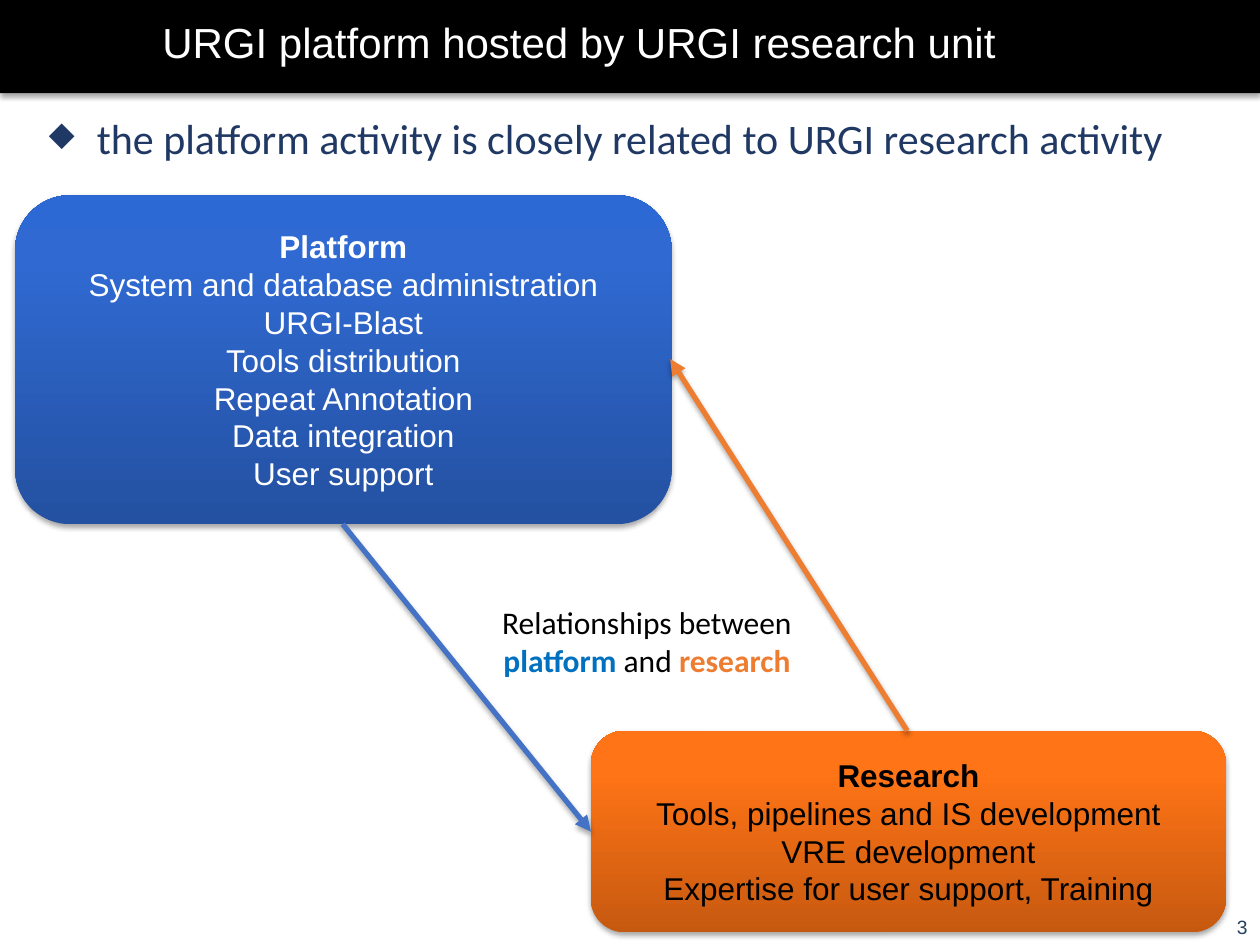
"""Build the slide relating the URGI platform to the URGI research unit."""
from lxml import etree
from pptx import Presentation
from pptx.dml.color import RGBColor
from pptx.enum import shapes, text
from pptx.oxml import ns
from pptx.util import Inches, Pt

BLACK = RGBColor(0x00, 0x00, 0x00)
WHITE = RGBColor(0xFF, 0xFF, 0xFF)
NAVY = RGBColor(0x20, 0x38, 0x64)
NUMBER = RGBColor(0x25, 0x40, 0x61)
BLUE = RGBColor(0x44, 0x72, 0xC4)
ORANGE = RGBColor(0xED, 0x7D, 0x31)
SKY = RGBColor(0x00, 0x70, 0xC0)
PLATFORM_STOPS = [
    (0, RGBColor(0x24, 0x51, 0xA1)),
    (80, RGBColor(0x2F, 0x69, 0xD1)),
    (100, RGBColor(0x2C, 0x69, 0xD5)),
]
RESEARCH_STOPS = [
    (0, RGBColor(0xC6, 0x59, 0x10)),
    (80, RGBColor(0xFF, 0x74, 0x16)),
    (100, RGBColor(0xFF, 0x75, 0x17)),
]
LEFT, CENTER, RIGHT = text.PP_ALIGN.LEFT, text.PP_ALIGN.CENTER, text.PP_ALIGN.RIGHT
TOP, MIDDLE = text.MSO_ANCHOR.TOP, text.MSO_ANCHOR.MIDDLE


def add_shadow(sp):
    effects = etree.SubElement(sp._element.spPr, ns.qn("a:effectLst"))
    shadow = etree.SubElement(effects, ns.qn("a:outerShdw"), blurRad=str(Pt(3.1)),
                              dist=str(Pt(1.8)), dir="5400000", rotWithShape="0")
    color = etree.SubElement(shadow, ns.qn("a:srgbClr"), val=str(BLACK))
    etree.SubElement(color, ns.qn("a:alpha"), val="35000")


def write(sp, lines, name, size, align, anchor):
    tf = sp.text_frame
    tf.word_wrap = True
    tf.vertical_anchor = anchor
    for i, runs in enumerate(lines):
        p = tf.add_paragraph() if i else tf.paragraphs[0]
        p.alignment = align
        for wording, color, bold in runs:
            r = p.add_run()
            r.text = wording
            for key, value in {"name": name, "size": Pt(size), "bold": bold}.items():
                setattr(r.font, key, value)
            r.font.color.rgb = color
    return tf


prs = Presentation()
prs.slide_width, prs.slide_height = Inches(10), Inches(7.5)
s = prs.slides.add_slide(prs.slide_layouts[6])

sp = s.shapes.add_shape(shapes.MSO_SHAPE.RECTANGLE, 0, 0, Inches(10), Inches(0.74))
sp.fill.solid()
sp.fill.fore_color.rgb = BLACK
sp.line.fill.background()
add_shadow(sp)

labels = [
    ((1.19, 0.16, 8.94, 0.47),
     [[("URGI platform hosted by URGI research unit", WHITE, False)]],
     "Arial", 24, LEFT, TOP),
    ((9.49, 7.21, 0.51, 0.29), [[("3", NUMBER, False)]], "Arial", 11, RIGHT, MIDDLE),
    ((0.29, 0.84, 9.25, 0.61),
     [[("the platform activity is closely related to URGI research activity", NAVY, False)]],
     "Calibri", 24, LEFT, TOP),
    ((3.88, 4.74, 2.51, 0.71),
     [[("Relationships between", BLACK, False)],
      [("platform", SKY, True), (" and ", BLACK, False), ("research", ORANGE, True)]],
     "Calibri", 18, CENTER, TOP),
]
frames = []
for box, *content in labels:
    sp = s.shapes.add_textbox(*map(Inches, box))
    frames.append(write(sp, *content))
title, number, statement, caption = frames
title.paragraphs[0].line_spacing = 0.8

pPr = statement.paragraphs[0]._p.get_or_add_pPr()
pPr.set("marL", str(Inches(0.38)))
pPr.set("indent", str(Inches(-0.38)))
etree.SubElement(pPr, ns.qn("a:buSzPct"), val="80000")
etree.SubElement(pPr, ns.qn("a:buChar"), char="◆")

cards = [
    ((0.12, 1.55, 5.21, 2.61), PLATFORM_STOPS, WHITE,
     ["Platform", "System and database administration", "URGI-Blast",
      "Tools distribution", "Repeat Annotation", "Data integration", "User support"]),
    ((4.69, 5.8, 5.04, 1.6), RESEARCH_STOPS, BLACK,
     ["Research", "Tools, pipelines and IS development", "VRE development",
      "Expertise for user support, Training"]),
]
margins = {"margin_left": 0.02, "margin_right": 0.02, "margin_top": 0.12, "margin_bottom": 0.12}
for box, stops, color, lines in cards:
    sp = s.shapes.add_shape(shapes.MSO_SHAPE.ROUNDED_RECTANGLE, *map(Inches, box))
    sp.fill.gradient()
    sp.fill.gradient_angle = 90
    gsLst = sp._element.spPr.find(".//" + ns.qn("a:gsLst"))
    for gs in list(gsLst):
        gsLst.remove(gs)
    for position, stop in stops:
        gs = etree.SubElement(gsLst, ns.qn("a:gs"), pos=str(position * 1000))
        etree.SubElement(gs, ns.qn("a:srgbClr"), val=str(stop))
    sp.line.fill.background()
    add_shadow(sp)
    runs = [[(line, color, i == 0)] for i, line in enumerate(lines)]
    tf = write(sp, runs, "Arial", 18, CENTER, MIDDLE)
    for key, value in margins.items():
        setattr(tf, key, Inches(value))

arrows = [((2.72, 4.16, 4.69, 6.6), BLUE), ((7.2, 5.8, 5.32, 2.85), ORANGE)]
for ends, color in arrows:
    line = s.shapes.add_connector(shapes.MSO_CONNECTOR.STRAIGHT, *map(Inches, ends))
    line.line.color.rgb = color
    line.line.width = Pt(3)
    etree.SubElement(line.line._get_or_add_ln(), ns.qn("a:tailEnd"), type="triangle")
    add_shadow(line)

prs.save("out.pptx")
